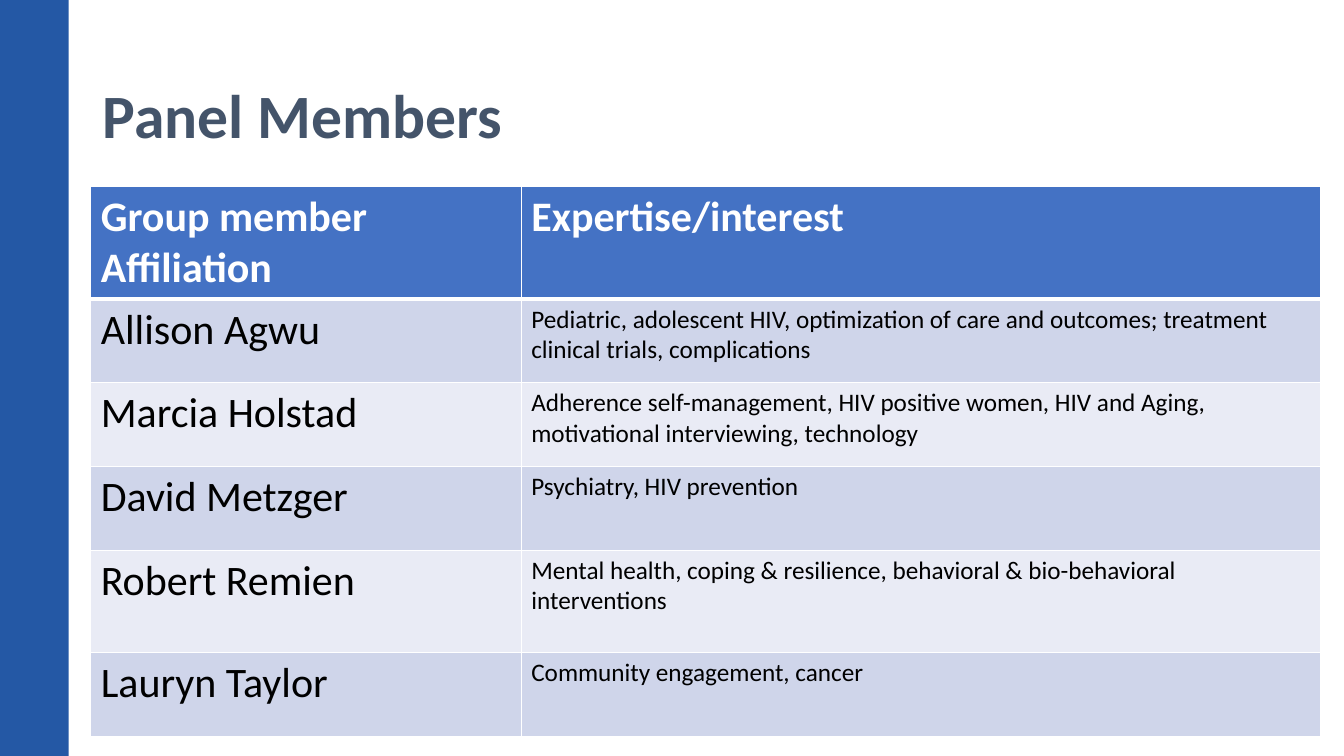
import dataclasses

import lxml.etree
import pptx
import pptx.dml.color
import pptx.enum.shapes
import pptx.enum.text
import pptx.oxml.ns
import pptx.util

EMU = 9144  # one px is a hundredth of an inch


@dataclasses.dataclass(frozen=True)
class Theme:
    font: str = "Calibri"
    bar: str = "2458A5"
    title: str = "44546A"
    head: str = "4472C4"
    bands: tuple = ("CFD5EA", "E9EBF5")
    white: str = "FFFFFF"
    black: str = "000000"
    big: int = 44
    mid: int = 30
    small: int = 18
    thin: int = 1
    thick: int = 3


def px(n):
    return pptx.util.Emu(n * EMU)


def rgb(code):
    return pptx.dml.color.RGBColor.from_string(code)


def write(frame, text, font, size, color, bold=False):
    """Fill a text frame, one left-aligned paragraph per line of text."""
    frame.text = text
    frame.word_wrap = True
    for para in frame.paragraphs:
        para.alignment = pptx.enum.text.PP_ALIGN.LEFT
        face = para.runs[0].font
        face.name, face.size, face.bold = font, pptx.util.Pt(size), bold
        face.color.rgb = rgb(color)


def edge(cell, side, color, width):
    """Add one cell border; side is L, R, T or B."""
    tag = pptx.oxml.ns.qn
    props = cell._tc.get_or_add_tcPr()
    line = lxml.etree.SubElement(props, tag("a:ln" + side), w=str(pptx.util.Pt(width)))
    fill = lxml.etree.SubElement(line, tag("a:solidFill"))
    lxml.etree.SubElement(fill, tag("a:srgbClr"), val=color)


class Deck:
    def __init__(self, theme, width, height):
        self.theme = theme
        self.show = pptx.Presentation()
        self.show.slide_width, self.show.slide_height = px(width), px(height)
        self.slide = self.show.slides.add_slide(self.show.slide_layouts[5])

    def bar(self, *box):
        shape = self.slide.shapes.add_shape(
            pptx.enum.shapes.MSO_SHAPE.RECTANGLE, *map(px, box))
        shape.shadow.inherit = False
        shape.fill.solid()
        shape.fill.fore_color.rgb = rgb(self.theme.bar)
        shape.line.fill.background()

    def title(self, text, *box):
        shape, look = self.slide.shapes.title, self.theme
        shape.left, shape.top, shape.width, shape.height = map(px, box)
        write(shape.text_frame, text, look.font, look.big, look.title, bold=True)
        shape.text_frame.vertical_anchor = pptx.enum.text.MSO_ANCHOR.MIDDLE

    def table(self, data, left, top, cols, rows):
        frame = self.slide.shapes.add_table(
            len(rows), len(cols), px(left), px(top), px(sum(cols)), px(sum(rows)))
        grid = frame.table
        for col, width in zip(grid.columns, cols):
            col.width = px(width)
        for row, height in zip(grid.rows, rows):
            row.height = px(height)
        for r, line in enumerate(data):
            for c, text in enumerate(line):
                self.cell(grid.cell(r, c), text, r, c)

    def cell(self, cell, text, r, c):
        look, head = self.theme, r == 0
        # The heavy rule runs between the header and the first body row.
        wide = {"T": r == 1, "B": head}
        for side in "LRTB":
            edge(cell, side, look.white, look.thick if wide.get(side) else look.thin)
        cell.fill.solid()
        cell.fill.fore_color.rgb = rgb(look.head if head else look.bands[(r - 1) % 2])
        write(cell.text_frame, text, look.font,
              look.mid if head or c == 0 else look.small,
              look.white if head else look.black, bold=head)


MEMBERS = [
    ("Group member\nAffiliation", "Expertise/interest"),
    ("Allison Agwu", "Pediatric, adolescent HIV, optimization of care and outcomes; "
                     "treatment clinical trials, complications"),
    ("Marcia Holstad", "Adherence self-management, HIV positive women, HIV and Aging, "
                       "motivational interviewing, technology"),
    ("David Metzger", "Psychiatry, HIV prevention"),
    ("Robert Remien", "Mental health, coping & resilience, behavioral & bio-behavioral "
                      "interventions"),
    ("Lauryn Taylor", "Community engagement, cancer"),
]


def main():
    deck = Deck(Theme(), 1333, 750)
    deck.bar(0, 0, 68, 750)
    deck.title("Panel Members", 92, 40, 1150, 145)
    deck.table(MEMBERS, 90, 185, cols=(427, 793), rows=(111, 83, 83, 83, 102, 83))
    deck.show.save("out.pptx")


if __name__ == "__main__":
    main()
